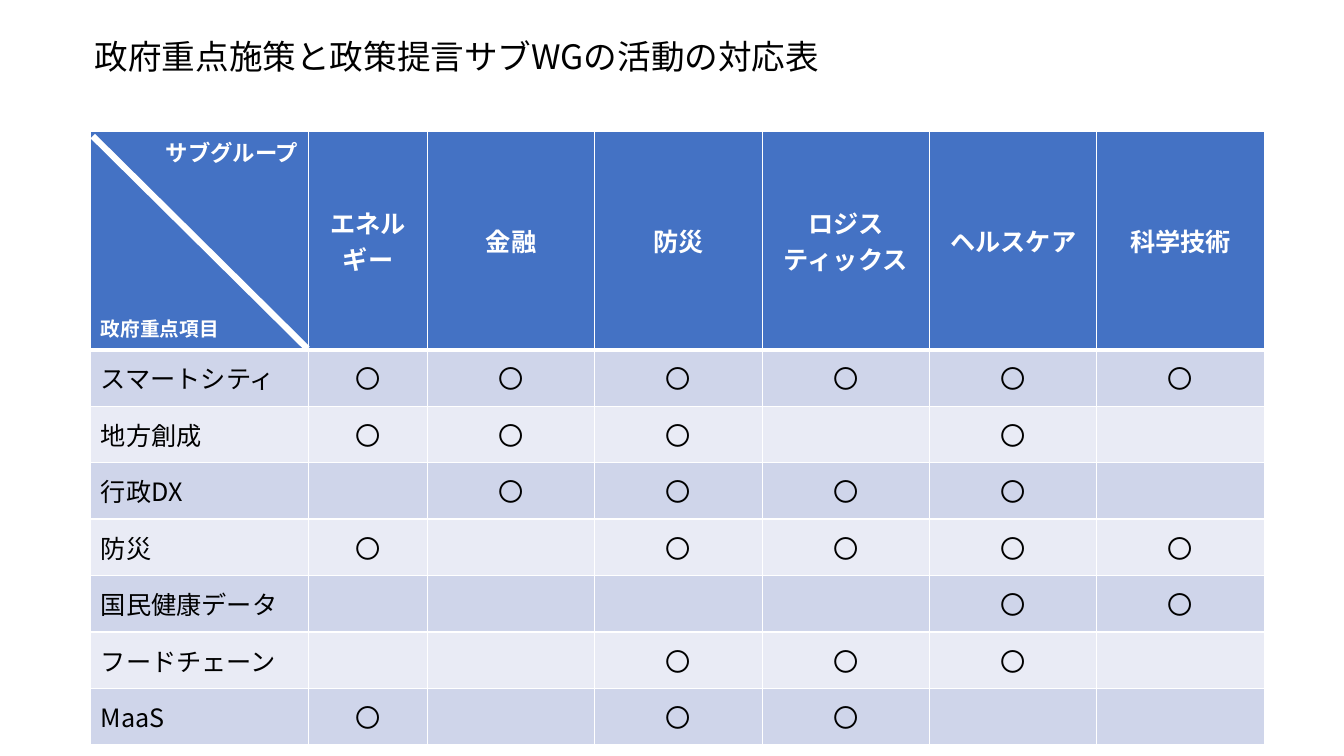
"""Build a slide with the table matching government priorities to working subgroups."""
from dataclasses import dataclass

from lxml import etree
from pptx import Presentation
from pptx.dml.color import RGBColor
from pptx.enum.lang import MSO_LANGUAGE_ID
from pptx.enum.shapes import MSO_CONNECTOR
from pptx.enum.text import MSO_ANCHOR, PP_ALIGN
from pptx.oxml.ns import qn
from pptx.slide import Slide
from pptx.table import Table, _Cell
from pptx.text.text import TextFrame
from pptx.util import Inches, Pt

LEFT, CENTER, RIGHT = PP_ALIGN.LEFT, PP_ALIGN.CENTER, PP_ALIGN.RIGHT
TOP, MIDDLE = MSO_ANCHOR.TOP, MSO_ANCHOR.MIDDLE
STRAIGHT = MSO_CONNECTOR.STRAIGHT
JAPANESE = MSO_LANGUAGE_ID.JAPANESE
FONT = "Noto Sans CJK JP"
COLORS = {
    "text": "000000",
    "white": "FFFFFF",
    "header": "4472C4",
    "band_dark": "CFD5EA",
    "band_light": "E9EBF5",
}
SUBGROUPS = ["エネルギー", "金融", "防災", "ロジスティックス", "ヘルスケア", "科学技術"]
MARK = "〇"
COLUMN_WIDTHS = [2.16, 1.18] + [1.66] * 5
HEADER_HEIGHT, ROW_HEIGHT = 2.17, 0.56


@dataclass(frozen=True)
class Priority:
    name: str
    subgroup_numbers: tuple[int, ...]


@dataclass(frozen=True)
class Line:
    text: str
    size: float = 18
    color: str = "text"
    bold: bool = False
    alignment: PP_ALIGN = LEFT
    space_before: float = 0
    line_spacing: float = 1.0


PRIORITIES = [
    Priority("スマートシティ", (1, 2, 3, 4, 5, 6)),
    Priority("地方創成", (1, 2, 3, 5)),
    Priority("行政DX", (2, 3, 4, 5)),
    Priority("防災", (1, 3, 4, 5, 6)),
    Priority("国民健康データ", (5, 6)),
    Priority("フードチェーン", (3, 4, 5)),
    Priority("MaaS", (1, 3, 4)),
]


def write_lines(text_frame: TextFrame, lines: list[Line]) -> None:
    for index, line in enumerate(lines):
        paragraph = text_frame.add_paragraph() if index else text_frame.paragraphs[0]
        paragraph_format = {
            "alignment": line.alignment,
            "space_before": Pt(line.space_before),
            "line_spacing": line.line_spacing,
        }
        for name, value in paragraph_format.items():
            setattr(paragraph, name, value)
        run = paragraph.add_run()
        run.text = line.text
        font_format = {
            "name": FONT,
            "size": Pt(line.size),
            "bold": line.bold,
            "language_id": JAPANESE,
        }
        for name, value in font_format.items():
            setattr(run.font, name, value)
        run.font.color.rgb = RGBColor.from_string(COLORS[line.color])
        latin = run.font._element.find(qn("a:latin"))
        east_asian = etree.Element(qn("a:ea"), typeface=FONT)
        latin.addnext(east_asian)


def set_borders(cell: _Cell, top: float, bottom: float) -> None:
    properties = cell._tc.get_or_add_tcPr()
    widths = {"a:lnL": 1, "a:lnR": 1, "a:lnT": top, "a:lnB": bottom}
    for position, (tag, width) in enumerate(widths.items()):
        border = etree.Element(qn(tag), w=str(Pt(width)))
        fill = etree.SubElement(border, qn("a:solidFill"))
        etree.SubElement(fill, qn("a:srgbClr"), val=COLORS["white"])
        properties.insert(position, border)


def fill_cell(cell: _Cell, lines: list[Line], fill: str, anchor: MSO_ANCHOR) -> None:
    cell.fill.solid()
    cell.fill.fore_color.rgb = RGBColor.from_string(COLORS[fill])
    cell.vertical_anchor = anchor
    write_lines(cell.text_frame, lines)


def fill_header(table: Table) -> None:
    corner = [
        Line("サブグループ", 16, "white", True, RIGHT),
        Line("政府重点項目", 14, "white", True, LEFT, space_before=104),
    ]
    fill_cell(table.cell(0, 0), corner, "header", TOP)
    for column, name in enumerate(SUBGROUPS, start=1):
        cell = table.cell(0, column)
        fill_cell(cell, [Line(name, 18, "white", True, CENTER)], "header", MIDDLE)
        cell._tc.get_or_add_tcPr().set("vert", "eaVert")


def fill_body(table: Table) -> None:
    for row, priority in enumerate(PRIORITIES, start=1):
        band = "band_dark" if row % 2 else "band_light"
        fill_cell(table.cell(row, 0), [Line(priority.name)], band, MIDDLE)
        for column in range(1, len(SUBGROUPS) + 1):
            marked = column in priority.subgroup_numbers
            lines = [Line(MARK, alignment=CENTER)] if marked else []
            fill_cell(table.cell(row, column), lines, band, MIDDLE)


def add_priority_table(slide: Slide) -> None:
    heights = [HEADER_HEIGHT] + [ROW_HEIGHT] * len(PRIORITIES)
    table = slide.shapes.add_table(
        len(heights), len(COLUMN_WIDTHS), Inches(0.9), Inches(1.3),
        Inches(sum(COLUMN_WIDTHS)), Inches(sum(heights)),
    ).table
    for column, width in zip(table.columns, COLUMN_WIDTHS):
        column.width = Inches(width)
    for row, height in zip(table.rows, heights):
        row.height = Inches(height)
    fill_header(table)
    fill_body(table)
    for index, row in enumerate(table.rows):
        for cell in row.cells:
            set_borders(cell, 3 if index == 1 else 1, 3 if index == 0 else 1)


def add_title(slide: Slide) -> None:
    title = slide.shapes.add_textbox(Inches(0.84), Inches(0.14), Inches(11.5), Inches(0.88))
    frame_format = {"word_wrap": True, "vertical_anchor": MIDDLE}
    for name, value in frame_format.items():
        setattr(title.text_frame, name, value)
    heading = Line("政府重点施策と政策提言サブWGの活動の対応表", 24, line_spacing=0.9)
    write_lines(title.text_frame, [heading])


def add_corner_diagonal(slide: Slide) -> None:
    diagonal = slide.shapes.add_connector(
        STRAIGHT, Inches(0.92), Inches(1.35), Inches(3.05), Inches(3.46)
    )
    diagonal.line.color.rgb = RGBColor.from_string(COLORS["white"])
    diagonal.line.width = Pt(4.5)
    etree.SubElement(diagonal._element.spPr, qn("a:effectLst"))


def main() -> None:
    presentation = Presentation()
    presentation.slide_width = Inches(13.33)
    presentation.slide_height = Inches(7.5)
    slide = presentation.slides.add_slide(presentation.slide_layouts[6])
    add_title(slide)
    add_priority_table(slide)
    add_corner_diagonal(slide)
    presentation.save("out.pptx")


if __name__ == "__main__":
    main()
